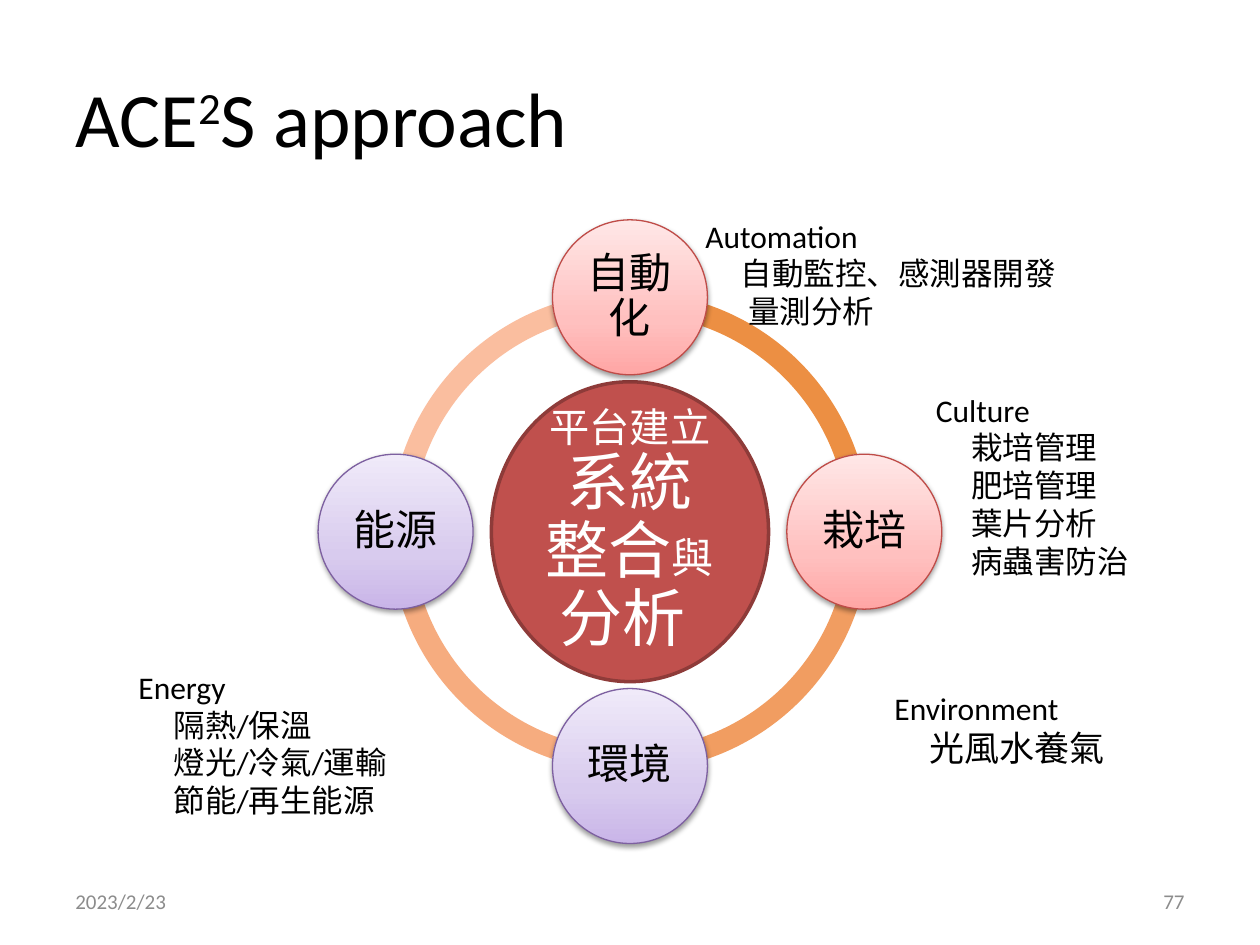
from lxml import etree
from pptx import Presentation
from pptx.dml.color import RGBColor
from pptx.enum.shapes import MSO_SHAPE
from pptx.enum.text import MSO_ANCHOR, MSO_AUTO_SIZE, PP_ALIGN
from pptx.oxml import parse_xml
from pptx.oxml.ns import qn
from pptx.util import Inches, Pt

ARC, OVAL = MSO_SHAPE.BLOCK_ARC, MSO_SHAPE.OVAL
TOP, MIDDLE = MSO_ANCHOR.TOP, MSO_ANCHOR.MIDDLE
LEFT, CENTER, RIGHT = PP_ALIGN.LEFT, PP_ALIGN.CENTER, PP_ALIGN.RIGHT
FIT = MSO_AUTO_SIZE.SHAPE_TO_FIT_TEXT
A = 'xmlns:a="http://schemas.openxmlformats.org/drawingml/2006/main"'

THEME = {
    "latin": "Calibri", "cjk": "Noto Sans CJK SC",
    "text": "000000", "light": "FFFFFF", "muted": "8C8C8C",
    "hub": "C0504D", "hub_line": "8E3B39",
    "red": (("FFA6A5", "FFC0BF", "FFE7E7"), "BF4C48"),
    "purple": (("C9B5E8", "D8CBEE", "F0EAF9"), "7D60A0"),
    "title": 44, "node": 24, "note": 18, "note_big": 20, "footer": 12,
}

# Content: text runs are (text, size, superscript percent)
TITLE = [("ACE", THEME["title"], 0), ("2", THEME["title"], 30),
         ("S approach", THEME["title"], 0)]
HUB = [("平台建立", 23, 0), ("系統整合", 36, 0), ("與", 24, 0), ("分析 ", 36, 0)]
# Nodes: label, direction from the centre, palette
NODES = [("自動化", (0, -1), "red"), ("栽培", (1, 0), "red"),
         ("環境", (0, 1), "purple"), ("能源", (-1, 0), "purple")]
# Ring quarters: start and end angle adjustments, colour
ARCS = [(108, 162, "FABE9F"), (54, 108, "F6AC7F"),
        (0, 54, "F19D61"), (162, 0, "EC8F43")]
# Notes: box, heading, item size, (item, indent) list
NOTES = [
    ((5.5, 1.67, 3.25, 1.01), "Automation", THEME["note"],
     [("自動監控、感測器開發", 0.28), ("量測分析", 0.34)]),
    ((7.33, 3.05, 2, 1.62), "Culture", THEME["note"],
     [("栽培管理", 0.28), ("肥培管理", 0.28), ("葉片分析", 0.28), ("病蟲害防治", 0.28)]),
    ((7, 5.42, 2.25, 0.74), "Environment", THEME["note_big"],
     [("光風水養氣", 0.28)]),
    ((1, 5.25, 3.25, 1.31), "Energy", THEME["note"],
     [("隔熱/保溫", 0.28), ("燈光/冷氣/運輸", 0.28), ("節能/再生能源", 0.28)]),
]
FOOTER = [((0.5, 6.95, 2.33, 0.4), "2023/2/23", LEFT),
          ((7.17, 6.95, 2.33, 0.4), "77", RIGHT)]

# Geometry in inches
CX, CY = 5, 4.22
RING, NODE, ORBIT = 3.81, 1.23, 1.86
HUB_W, HUB_H = 2.2, 2.38


def centered(x, y, w, h):
    return x - w / 2, y - h / 2, w, h


def inches(box):
    return [Inches(v) for v in box]


def add_paragraph(tf, runs, color, font, first=True, align=LEFT, indent=0):
    p = tf.paragraphs[0] if first else tf.add_paragraph()
    p.alignment = align
    if indent:
        p._p.get_or_add_pPr().set("marL", str(Inches(indent)))
    for text, size, raised in runs:
        r = p.add_run()
        r.text = text
        for name, value in {"size": Pt(size), "name": font}.items():
            setattr(r.font, name, value)
        r.font.color.rgb = RGBColor.from_string(color)
        rPr = r.font._element
        if raised:
            rPr.set("baseline", str(raised * 1000))
        etree.SubElement(rPr, qn("a:ea")).set("typeface", THEME["cjk"])
    return p


def add_text_box(box, anchor=MIDDLE):
    tf = s.shapes.add_textbox(*inches(box)).text_frame
    tf.word_wrap = True
    tf.vertical_anchor = anchor
    return tf


def add_shape(kind, box, fill=None, line=None, width=0):
    sp = s.shapes.add_shape(kind, *inches(box))
    sp.shadow.inherit = False
    if fill:
        sp.fill.solid()
        sp.fill.fore_color.rgb = RGBColor.from_string(fill)
    if line:
        sp.line.color.rgb = RGBColor.from_string(line)
        sp.line.width = Pt(width)
    else:
        sp.line.fill.background()
    return sp


def fill_circle(sp, runs, color):
    tf = sp.text_frame
    margins = ("margin_left", "margin_right", "margin_top", "margin_bottom")
    for name, value in {"word_wrap": True, "vertical_anchor": MIDDLE,
                        **dict.fromkeys(margins, Inches(0.04))}.items():
        setattr(tf, name, value)
    p = add_paragraph(tf, runs, color, THEME["cjk"], align=CENTER)
    p.line_spacing = 0.9


def shade(sp, colors):
    """Vertical three-stop gradient and a soft drop shadow."""
    stops = "".join(f'<a:gs pos="{pos}"><a:srgbClr val="{c}"/></a:gs>'
                    for pos, c in zip((0, 35000, 100000), colors))
    gradient = parse_xml(f'<a:gradFill {A} rotWithShape="1"><a:gsLst>{stops}</a:gsLst>'
                         '<a:lin ang="16200000" scaled="1"/></a:gradFill>')
    spPr = sp._element.spPr
    spPr.find(qn("a:prstGeom")).addnext(gradient)
    spPr.find(qn("a:effectLst")).append(parse_xml(
        f'<a:outerShdw {A} blurRad="{Pt(3.1)}" dist="{Pt(1.6)}" dir="5400000" '
        'rotWithShape="0"><a:srgbClr val="000000"><a:alpha val="38000"/>'
        '</a:srgbClr></a:outerShdw>'))


prs = Presentation()
prs.slide_width, prs.slide_height = Inches(10), Inches(7.5)
s = prs.slides.add_slide(prs.slide_layouts[6])

# Title
add_paragraph(add_text_box((0.5, 0.3, 9, 1.25)), TITLE, THEME["text"], THEME["latin"])

# Ring
for start, end, color in ARCS:
    sp = add_shape(ARC, centered(CX, CY, RING, RING), color)
    for i, value in enumerate((start, end, 0.046)):
        sp.adjustments[i] = value

# Hub
sp = add_shape(OVAL, centered(CX, CY, HUB_W, HUB_H), THEME["hub"], THEME["hub_line"], 2)
fill_circle(sp, HUB, THEME["light"])

# Nodes
for label, (dx, dy), palette in NODES:
    colors, line = THEME[palette]
    box = centered(CX + dx * ORBIT, CY + dy * ORBIT, NODE, NODE)
    sp = add_shape(OVAL, box, line=line, width=0.75)
    shade(sp, colors)
    fill_circle(sp, [(label, THEME["node"], 0)], THEME["text"])

# Footer
for box, text, align in FOOTER:
    add_paragraph(add_text_box(box), [(text, THEME["footer"], 0)],
                  THEME["muted"], THEME["latin"], align=align)

# Notes
for box, heading, size, items in NOTES:
    tf = add_text_box(box, TOP)
    tf.auto_size = FIT
    add_paragraph(tf, [(heading, THEME["note"], 0)], THEME["text"], THEME["latin"])
    for item, indent in items:
        add_paragraph(tf, [(item, size, 0)], THEME["text"], THEME["latin"],
                      first=False, indent=indent)

prs.save("out.pptx")
